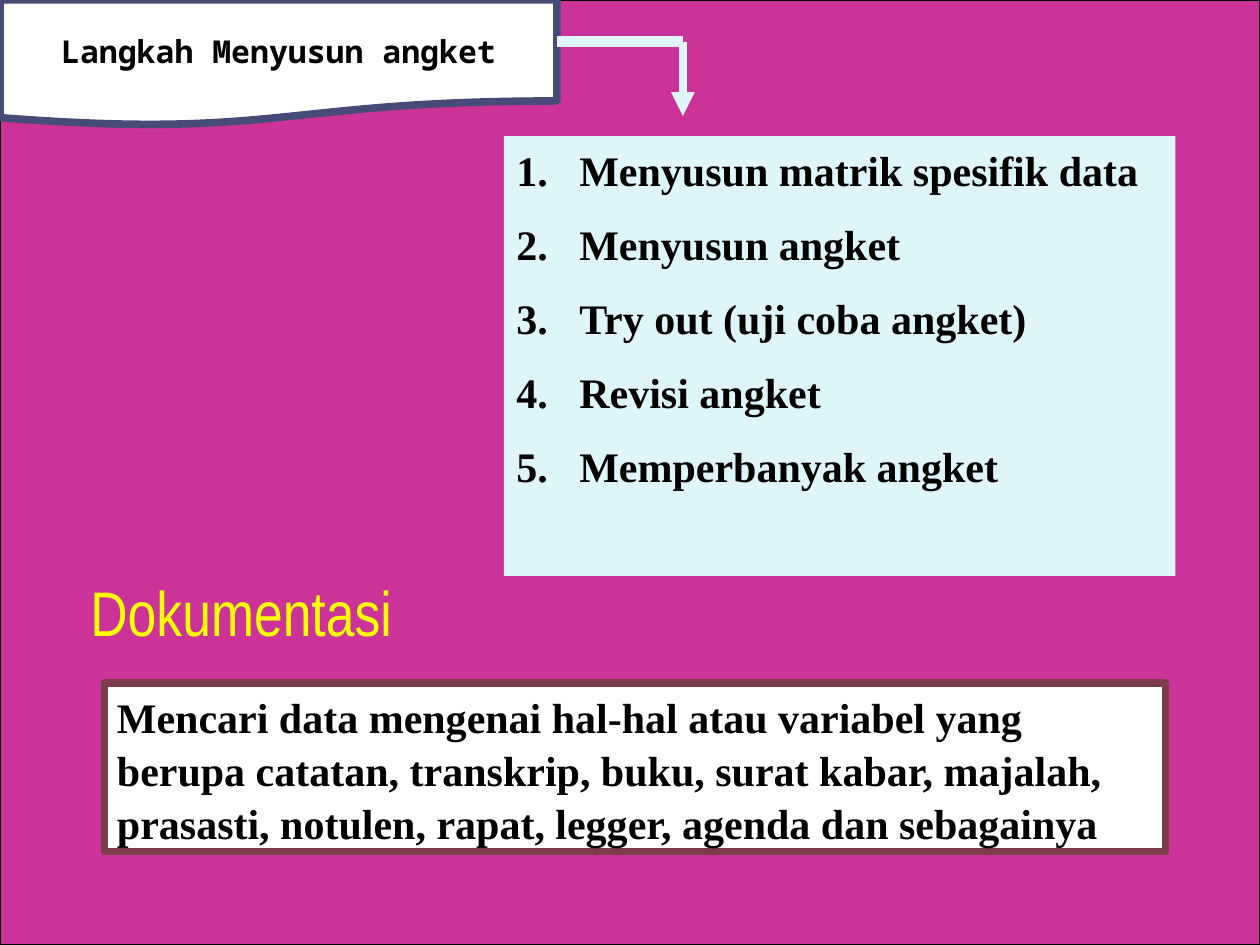
from lxml import etree
from pptx import Presentation
from pptx.dml.color import RGBColor
from pptx.enum import shapes, text
from pptx.oxml.ns import qn
from pptx.util import Inches, Pt

BLACK = RGBColor(0x00, 0x00, 0x00)
WHITE = RGBColor(0xFF, 0xFF, 0xFF)
MAGENTA = RGBColor(0xCC, 0x33, 0x99)
ICE = RGBColor(0xDE, 0xF5, 0xFA)
INDIGO = RGBColor(0x47, 0x4B, 0x78)
MAROON = RGBColor(0x7D, 0x3C, 0x4A)
YELLOW = RGBColor(0xFF, 0xFF, 0x00)

SERIF = "Times New Roman"
STEPS = [
    "Menyusun matrik spesifik data",
    "Menyusun angket",
    "Try out (uji coba angket)",
    "Revisi angket",
    "Memperbanyak angket",
]
DEFINITION = (
    "Mencari data mengenai hal-hal atau variabel yang berupa catatan, "
    "transkrip, buku, surat kabar, majalah, prasasti, notulen, rapat, "
    "legger, agenda dan sebagainya"
)


def add_panel(page, kind, bounds, fill, line=None, width=0):
    box = page.shapes.add_shape(kind, *map(Inches, bounds))
    box.shadow.inherit = False
    box.fill.solid()
    box.fill.fore_color.rgb = fill
    if line is None:
        box.line.fill.background()
    else:
        box.line.color.rgb = line
        box.line.width = Pt(width)
    return box


def style_font(para, name, size, color, bold=True):
    for span in para.runs:
        span.font.name = name
        span.font.size = Pt(size)
        span.font.bold = bold
        span.font.color.rgb = color


def write_label(box, label, name, size, color, bold):
    frame = box.text_frame
    frame.word_wrap = False
    frame.text = label
    para = frame.paragraphs[0]
    para.alignment = text.PP_ALIGN.CENTER
    style_font(para, name, size, color, bold)


def write_body(box, lines, numbered=False):
    frame = box.text_frame
    frame.word_wrap = True
    frame.vertical_anchor = text.MSO_ANCHOR.TOP
    frame.text = "\n".join(lines)
    for index, para in enumerate(frame.paragraphs):
        para.alignment = text.PP_ALIGN.LEFT
        para.line_spacing = 1.05
        if index:
            para.space_before = Pt(12)
        if numbered:
            add_number(para)
        style_font(para, SERIF, 24, BLACK)


def add_number(para):
    properties = para._p.get_or_add_pPr()
    properties.set("marL", str(Inches(0.5)))
    properties.set("indent", str(Inches(-0.5)))
    etree.SubElement(properties, qn("a:buFont"), typeface="+mj-lt")
    etree.SubElement(properties, qn("a:buAutoNum"), type="arabicPeriod")


def add_line(page, start, end, width, arrow=False):
    line = page.shapes.add_connector(
        shapes.MSO_CONNECTOR.STRAIGHT, *map(Inches, start + end)
    )
    line.line.color.rgb = ICE
    line.line.width = Pt(width)
    if arrow:
        etree.SubElement(line.line._get_or_add_ln(), qn("a:tailEnd"), type="triangle")
    etree.SubElement(line._element.spPr, qn("a:effectLst"))


def main():
    deck = Presentation()
    deck.slide_width, deck.slide_height = Inches(10), Inches(7.5)
    page = deck.slides.add_slide(deck.slide_layouts[6])
    rectangle = shapes.MSO_SHAPE.RECTANGLE

    add_panel(page, rectangle, (0, 0, 10, 7.5), MAGENTA, BLACK, 0.75)
    steps = add_panel(page, rectangle, (4, 1.08, 5.33, 3.49), ICE)
    write_body(steps, STEPS, numbered=True)

    banner = add_panel(
        page, shapes.MSO_SHAPE.FLOWCHART_DOCUMENT, (0, 0, 4.42, 1), WHITE, INDIGO, 4.33
    )
    write_label(banner, "Langkah Menyusun angket", "Noto Sans Mono", 18, BLACK, True)

    corner = (5.42, 0.33)
    add_line(page, (4.42, 0.33), corner, 6)
    add_line(page, corner, (5.42, 0.92), 4.5, arrow=True)

    heading = page.shapes.add_textbox(*map(Inches, (0.33, 4.5, 3.17, 0.62)))
    write_label(heading, "Dokumentasi", "Arial Narrow", 36, YELLOW, False)

    definition = add_panel(page, rectangle, (0.83, 5.42, 8.42, 1.34), WHITE, MAROON, 4.33)
    write_body(definition, [DEFINITION])

    deck.save("out.pptx")


if __name__ == "__main__":
    main()
